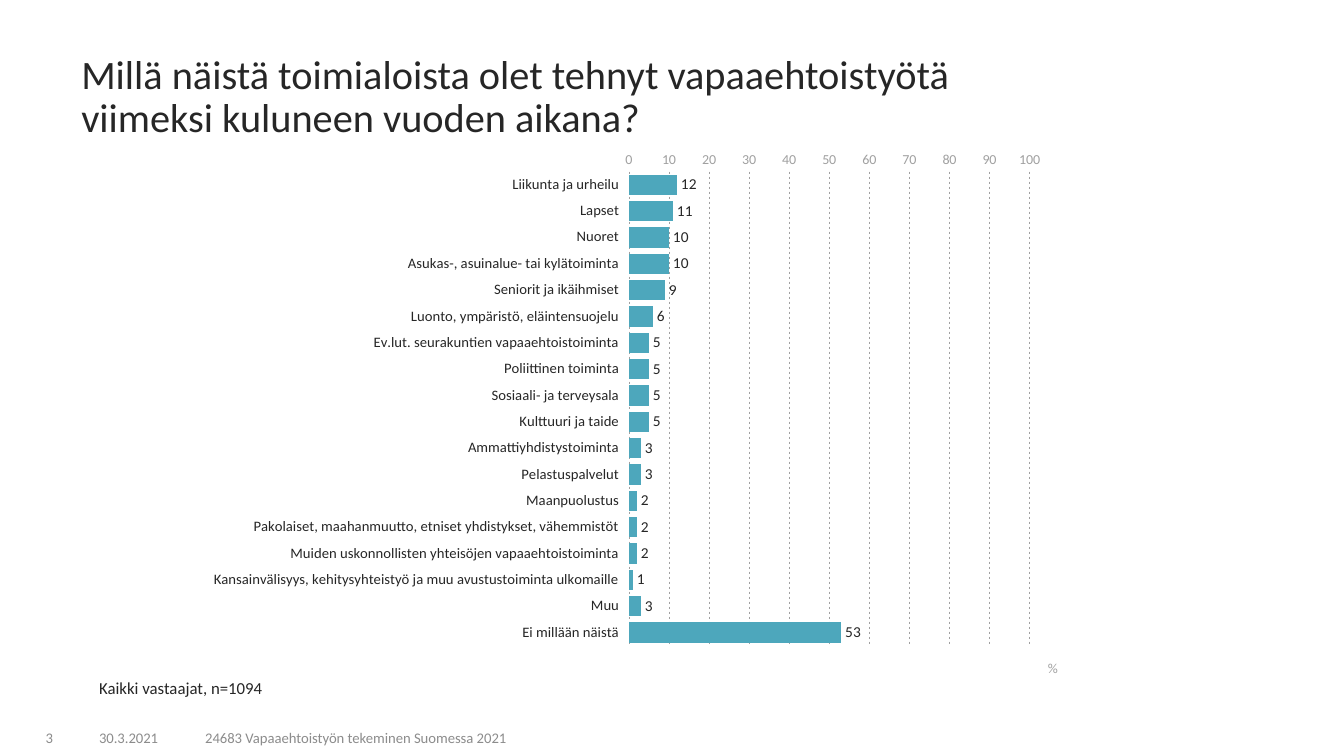
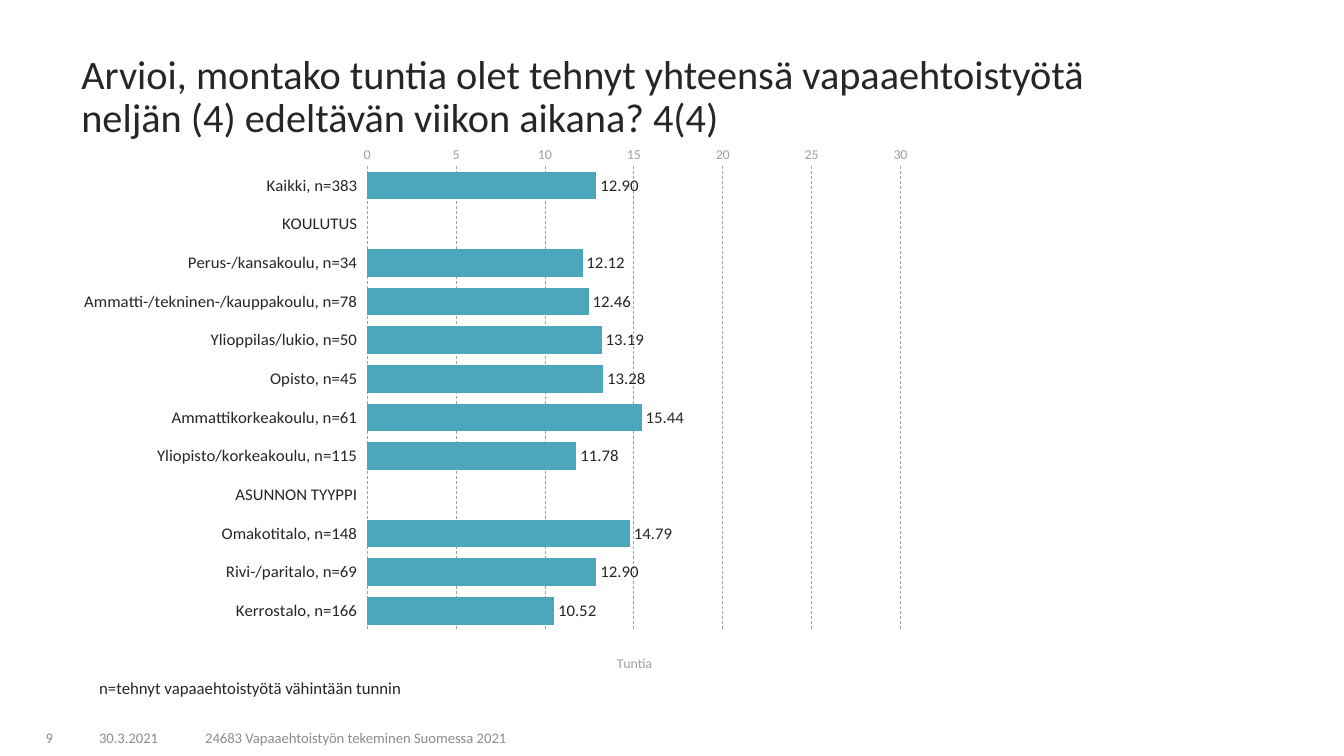
from lxml.etree import SubElement
from pptx import Presentation
from pptx.chart.data import CategoryChartData
from pptx.dml.color import RGBColor
from pptx.enum.chart import (XL_AXIS_CROSSES, XL_CHART_TYPE, XL_LABEL_POSITION,
                             XL_TICK_LABEL_POSITION, XL_TICK_MARK)
from pptx.enum.dml import MSO_LINE
from pptx.enum.text import MSO_ANCHOR, PP_ALIGN
from pptx.oxml import parse_xml
from pptx.oxml.ns import nsdecls, qn
from pptx.util import Pt

PX = 9525  # EMU in one px, 96 px to the inch
FONT = "Calibri"
COLORS = {name: RGBColor.from_string(value) for name, value in {
    "text": "262626", "footer": "8C8C8C", "axis": "A0A0A0", "bar": "4DA7BC"}.items()}
CHART_SIZE = (826, 503)
DATE = "30.3.2021"
STUDY = "24683 Vapaaehtoistyön tekeminen Suomessa 2021"

questions = [
    dict(
        number="3",
        title="Millä näistä toimialoista olet tehnyt vapaaehtoistyötä\v"
              "viimeksi kuluneen vuoden aikana?",
        note="Kaikki vastaajat, n=1094", note_width=296,
        chart_at=(186, 145), plot=dict(x=0.5, y=0.017, w=0.462, h=0.917),
        unit="%", unit_at=dict(x=0.98, y=0.955),
        maximum=100, step=10, gap=30, category_size=10.5,
        value_size=11, value_format="#,##0",
        answers=[
            ("Liikunta ja urheilu", 12),
            ("Lapset", 11),
            ("Nuoret", 10),
            ("Asukas-, asuinalue- tai kylätoiminta", 10),
            ("Seniorit ja ikäihmiset", 9),
            ("Luonto, ympäristö, eläintensuojelu", 6),
            ("Ev.lut. seurakuntien vapaaehtoistoiminta", 5),
            ("Poliittinen toiminta", 5),
            ("Sosiaali- ja terveysala", 5),
            ("Kulttuuri ja taide", 5),
            ("Ammattiyhdistystoiminta", 3),
            ("Pelastuspalvelut", 3),
            ("Maanpuolustus", 2),
            ("Pakolaiset, maahanmuutto, etniset yhdistykset, vähemmistöt", 2),
            ("Muiden uskonnollisten yhteisöjen vapaaehtoistoiminta", 2),
            ("Kansainvälisyys, kehitysyhteistyö ja muu avustustoiminta ulkomaille", 1),
            ("Muu", 3),
            ("Ei millään näistä", 53),
        ]),
    dict(
        number="9",
        title="Arvioi, montako tuntia olet tehnyt yhteensä vapaaehtoistyötä\v"
              "neljän (4) edeltävän viikon aikana? 4(4)",
        note="n=tehnyt vapaaehtoistyötä vähintään tunnin", note_width=391,
        chart_at=(68, 140), plot=dict(x=0.341, y=0.012, w=0.615, h=0.91),
        unit="Tuntia", unit_at=dict(x=0.626, y=0.964),
        maximum=30, step=5, gap=40, category_size=12,
        value_size=12, value_format="#,##0.00",
        answers=[
            ("Kaikki, n=383", 12.9),
            ("KOULUTUS", None),
            ("Perus-/kansakoulu, n=34", 12.12),
            ("Ammatti-/tekninen-/kauppakoulu, n=78", 12.46),
            ("Ylioppilas/lukio, n=50", 13.19),
            ("Opisto, n=45", 13.28),
            ("Ammattikorkeakoulu, n=61", 15.44),
            ("Yliopisto/korkeakoulu, n=115", 11.78),
            ("ASUNNON TYYPPI", None),
            ("Omakotitalo, n=148", 14.79),
            ("Rivi-/paritalo, n=69", 12.9),
            ("Kerrostalo, n=166", 10.52),
        ]),
]


def add_text(slide, box, text, size, color, anchor, align=PP_ALIGN.LEFT, spacing=1.0):
    frame = slide.shapes.add_textbox(*(side * PX for side in box)).text_frame
    frame.word_wrap = True
    frame.vertical_anchor = anchor
    paragraph = frame.paragraphs[0]
    paragraph.text = text
    paragraph.alignment = align
    paragraph.line_spacing = spacing
    for run in paragraph.runs:
        run.font.name = FONT
        run.font.size = Pt(size)
        run.font.color.rgb = COLORS[color]


def place_in_chart(element, index, fractions, inner=False):
    """Give a chart part a manual layout, in fractions of the chart's size."""
    for old in element.findall(qn("c:layout")):
        element.remove(old)
    layout = parse_xml(f"<c:layout {nsdecls('c')}/>")
    manual = SubElement(layout, qn("c:manualLayout"))
    if inner:
        SubElement(manual, qn("c:layoutTarget")).set("val", "inner")
    for side in ("x", "y"):
        SubElement(manual, qn(f"c:{side}Mode")).set("val", "edge")
    for side, fraction in fractions.items():
        SubElement(manual, qn(f"c:{side}")).set("val", str(fraction))
    element.insert(index, layout)


prs = Presentation()
prs.slide_width = 1280 * PX
prs.slide_height = 720 * PX

for question in questions:
    slide = prs.slides.add_slide(prs.slide_layouts[6])

    for text, left, width, align in [
            (DATE, 63, 119, PP_ALIGN.CENTER),
            (STUDY, 186, 568, PP_ALIGN.LEFT),
            (question["number"], 3, 57, PP_ALIGN.RIGHT)]:
        add_text(slide, (left, 687, width, 29), text, 10.5, "footer",
                 MSO_ANCHOR.BOTTOM, align)
    add_text(slide, (68, 61, 1159, 65), question["title"], 28.8, "text",
             MSO_ANCHOR.MIDDLE, spacing=0.9)

    data = CategoryChartData()
    data.categories = [answer for answer, _ in question["answers"]]
    data.add_series("Series 1", [value for _, value in question["answers"]])
    chart = slide.shapes.add_chart(
        XL_CHART_TYPE.BAR_CLUSTERED,
        *(side * PX for side in question["chart_at"] + CHART_SIZE), data).chart
    chart.has_legend = False
    chart.has_title = False
    chart.font.name = FONT
    chart.font.size = Pt(12)
    chart.font.color.rgb = COLORS["text"]
    place_in_chart(chart.plots[0]._element.getparent(), 0, question["plot"], inner=True)

    bars = chart.plots[0]
    bars.gap_width = question["gap"]
    bars.vary_by_categories = False
    series = bars.series[0]
    series.invert_if_negative = False
    series.format.fill.solid()
    series.format.fill.fore_color.rgb = COLORS["bar"]
    labels = series.data_labels
    labels.show_value = True
    labels.position = XL_LABEL_POSITION.OUTSIDE_END
    labels.number_format = question["value_format"]
    labels.number_format_is_linked = False
    labels.font.size = Pt(question["value_size"])
    labels.font.color.rgb = COLORS["text"]

    categories, values = chart.category_axis, chart.value_axis
    for axis in (categories, values):
        axis.major_tick_mark = axis.minor_tick_mark = XL_TICK_MARK.NONE
        axis.format.line.fill.background()
    categories.reverse_order = True
    categories.crosses = XL_AXIS_CROSSES.MAXIMUM
    categories.tick_label_position = XL_TICK_LABEL_POSITION.LOW
    categories.tick_labels.font.size = Pt(question["category_size"])

    values.minimum_scale = 0
    values.maximum_scale = question["maximum"]
    values.major_unit = question["step"]
    values.tick_labels.number_format = "General"
    values.tick_labels.number_format_is_linked = False
    values.tick_labels.font.size = Pt(10)
    values.tick_labels.font.color.rgb = COLORS["axis"]
    values.has_major_gridlines = True
    grid = values.major_gridlines.format.line
    grid.color.rgb = COLORS["axis"]
    grid.width = Pt(0.5)
    grid.dash_style = MSO_LINE.DASH

    unit = values.axis_title.text_frame.paragraphs[0]
    unit.text = question["unit"]
    unit_font = unit.runs[0].font
    unit_font.name = FONT
    unit_font.size = Pt(10)
    unit_font.bold = False
    unit_font.color.rgb = COLORS["axis"]
    place_in_chart(values.axis_title._element, 1, question["unit_at"])

    add_text(slide, (85, 643, question["note_width"], 27), question["note"], 12, "text",
             MSO_ANCHOR.TOP, spacing=0.9)

prs.save("out.pptx")
